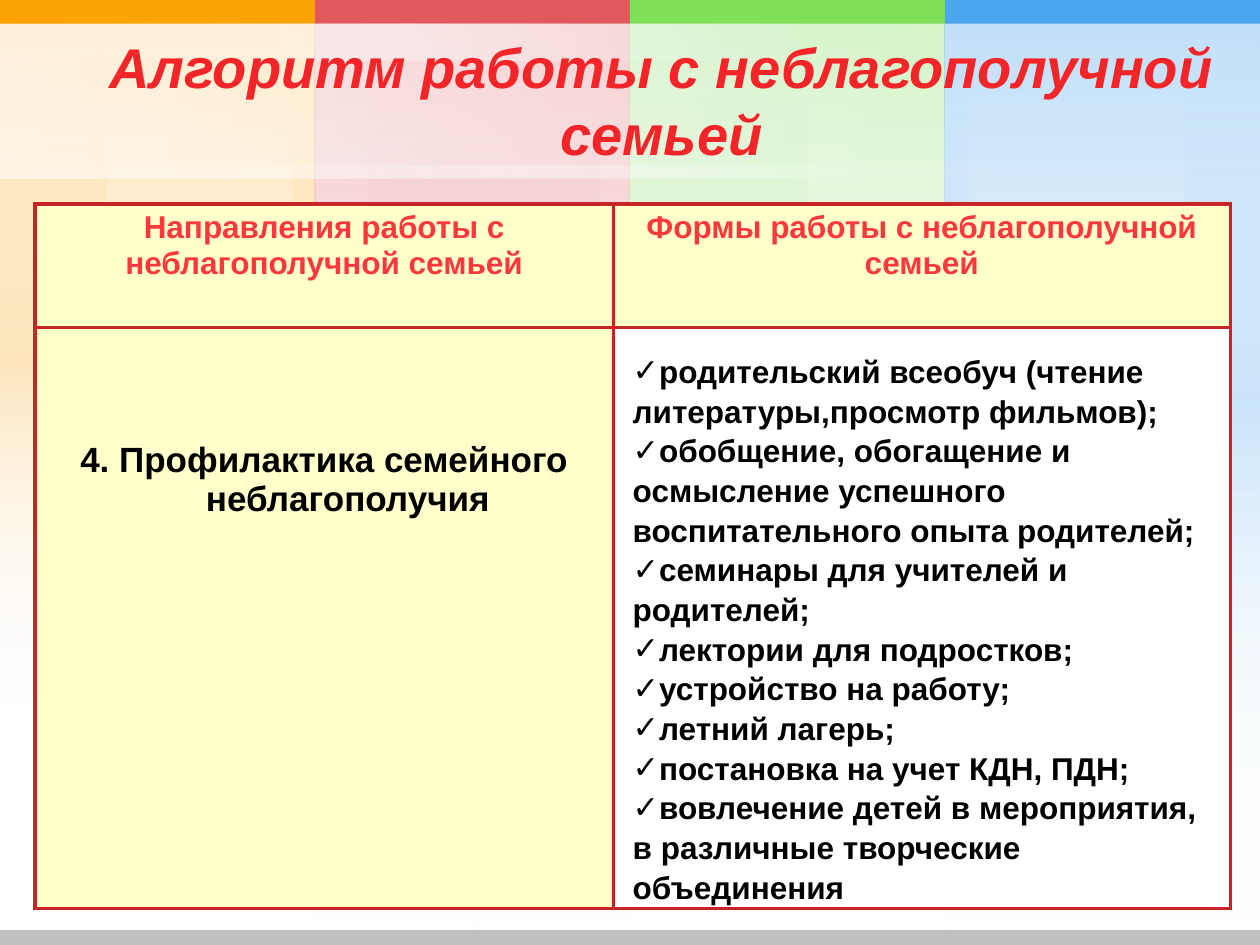
import lxml.etree
import pptx
import pptx.dml.color
import pptx.enum.shapes
import pptx.enum.text
import pptx.oxml.ns
import pptx.util

Pt = pptx.util.Pt
qn = pptx.oxml.ns.qn
CENTER = pptx.enum.text.PP_ALIGN.CENTER

HUES = {
    "orange": "FCA304", "red": "E1595C", "green": "80E05A", "blue": "4BA5EF",
    "white": "FFFFFF", "gray": "C0C0C0", "black": "000000", "cream": "FFFFCC",
    "border": "C72428", "outline": "FF0000",
}
TITLE_STOPS = [(0, "FF8F91", 100), (75, "F32528", 100), (100, "E80005", 100)]
HEAD_STOPS = [(0, "84090C", 100), (78, "FD383C", 100), (100, "FFEDED", 100)]


def add(parent, tag, **attrs):
    node = lxml.etree.SubElement(parent, qn(tag))
    for name, value in attrs.items():
        node.set(name, str(value))
    return node


def blend(fill, holder, stops):
    """Give a vertical gradient; stops are (position, colour, opacity) in percent."""
    fill.background()
    old = holder.find(qn("a:noFill"))
    grad = add(holder, "a:gradFill", rotWithShape=1)
    items = add(grad, "a:gsLst")
    for place, hue, alpha in stops:
        stop = add(items, "a:gs", pos=place * 1000)
        color = add(stop, "a:srgbClr", val=hue)
        add(color, "a:alpha", val=alpha * 1000)
    add(grad, "a:lin", ang=5400000, scaled=0)
    holder.replace(old, grad)


def fade(hue, alpha):
    return [(0, HUES[hue], alpha), (100, HUES["white"], 0)]


def glow(hue, alpha):
    return [(0, HUES["white"], 0), (50, HUES[hue], alpha), (100, HUES["white"], 0)]


class Deck:
    """Holds the text style and the current slide."""

    font = "Arial"

    def __init__(self):
        self.file = pptx.Presentation()
        self.file.slide_width, self.file.slide_height = Pt(720), Pt(540)
        self.slide = self.file.slides.add_slide(self.file.slide_layouts[6])

    def color(self, hue):
        return pptx.dml.color.RGBColor.from_string(HUES[hue])

    def rect(self, x, y, w, h, hue=None, stops=None, turn=0):
        kind = pptx.enum.shapes.MSO_SHAPE.RECTANGLE
        shape = self.slide.shapes.add_shape(kind, Pt(x), Pt(y), Pt(w), Pt(h))
        shape.shadow.inherit = False
        shape.line.fill.background()
        shape.rotation = turn
        if stops:
            blend(shape.fill, shape.element.spPr, stops)
        else:
            shape.fill.solid()
            shape.fill.fore_color.rgb = self.color(hue)

    def style(self, para, size, stops=None, italic=False):
        for run in para.runs:
            font = run.font
            font.name, font.size = self.font, Pt(size)
            font.bold, font.italic = True, italic
            if stops:
                blend(font.fill, run._r.rPr, stops)
            else:
                font.color.rgb = self.color("black")

    def box(self, x, y, w, h, lines):
        shape = self.slide.shapes.add_textbox(Pt(x), Pt(y), Pt(w), Pt(h))
        frame = shape.text_frame
        frame.word_wrap = True
        frame.text = "\n".join(lines)
        return frame

    def title(self, x, y, w, h, text):
        frame = self.box(x, y, w, h, [text])
        frame.vertical_anchor = pptx.enum.text.MSO_ANCHOR.MIDDLE
        para = frame.paragraphs[0]
        para.alignment = CENTER
        self.style(para, 32, TITLE_STOPS, italic=True)
        props = para.runs[0]._r.rPr
        edge = add(props, "a:ln", w=Pt(0.9))
        add(add(edge, "a:solidFill"), "a:srgbClr", val=HUES["outline"])
        props.insert(0, edge)

    def checks(self, x, y, w, h, lines):
        frame = self.box(x, y, w, h, lines)
        for para in frame.paragraphs:
            props = para._p.get_or_add_pPr()
            props.set("marL", "0")
            props.set("indent", "0")
            add(props, "a:buFont", typeface=self.font)
            add(props, "a:buChar", char="✓")
            para.line_spacing = 1.05
            self.style(para, 18)

    def cell(self, cell, text, hue, size=18, stops=None):
        cell.text_frame.text = text
        para = cell.text_frame.paragraphs[0]
        para.alignment = CENTER
        self.style(para, size, stops)
        props = cell._tc.get_or_add_tcPr()
        for side in "LRTB":
            edge = add(props, "a:ln" + side, w=Pt(2.25))
            add(add(edge, "a:solidFill"), "a:srgbClr", val=HUES["border"])
        cell.fill.solid()
        cell.fill.fore_color.rgb = self.color(hue)
        return para

    def table(self, x, y, cols, rows, heads, topic):
        shape = self.slide.shapes.add_table(
            len(rows), len(cols), Pt(x), Pt(y), Pt(sum(cols)), Pt(sum(rows)))
        grid = shape.table
        for col, width in zip(grid.columns, cols):
            col.width = Pt(width)
        for row, height in zip(grid.rows, rows):
            row.height = Pt(height)
        for i, head in enumerate(heads):
            self.cell(grid.cell(0, i), head, "cream", stops=HEAD_STOPS)
        para = self.cell(grid.cell(1, 0), topic, "cream", size=20)
        grid.cell(1, 0).margin_top = Pt(65)
        props = para._p.get_or_add_pPr()
        props.set("marL", str(Pt(27)))
        props.set("indent", str(-Pt(27)))
        self.cell(grid.cell(1, 1), "", "white")


def main():
    deck = Deck()
    # Colour, panel height, glow height, and left and width of each glow
    panels = [
        ("orange", 405, 405, [(167, 13), (0, 60.5)]),
        ("red", 540, 540, [(210, 132)]),
        ("green", 405, 405, [(360, 101.5)]),
        ("blue", 538, 459, [(540, 13.5), (677.5, 42.5)]),
    ]
    wide = 180
    for i, (hue, tall, high, glows) in enumerate(panels):
        deck.rect(i * wide, 0, wide, tall, stops=fade(hue, 20))
        for x, w in glows:
            deck.rect(x, 0, w, high, stops=glow(hue, 20))
        deck.rect(i * wide, 0, wide, tall, stops=fade(hue, 20))
    for i, panel in enumerate(panels):
        deck.rect(i * wide, 0, wide, 13.5, panel[0])

    sheet = (227, -212.5, 88, 541)
    bands = [
        ((299.5, -205, 7, 606), glow),
        (sheet, fade),
        ((220.5, -206.5, 21, 461.5), glow),
        (sheet, fade),
    ]
    for spot, blur in bands:
        deck.rect(*spot, stops=blur("white", 35), turn=270)
    deck.rect(0, 531.5, 720, 8.5, "gray")

    deck.title(36, 20, 684, 74, "Алгоритм работы с неблагополучной семьей")
    deck.table(
        20, 116.5, [330.5, 352.5], [70.5, 332],
        ["Направления работы с неблагополучной семьей",
         "Формы работы с неблагополучной семьей"],
        "4. Профилактика семейного неблагополучия")
    deck.checks(354.5, 196.5, 340, 312.5, [
        "родительский всеобуч (чтение литературы,просмотр фильмов);",
        "обобщение, обогащение и осмысление успешного воспитательного опыта родителей;",
        "семинары для учителей и родителей;",
        "лектории для подростков;",
        "устройство на работу;",
        "летний лагерь;",
        "постановка на учет КДН, ПДН;",
        "вовлечение детей в мероприятия, в различные творческие объединения",
    ])
    deck.file.save("out.pptx")


if __name__ == "__main__":
    main()
